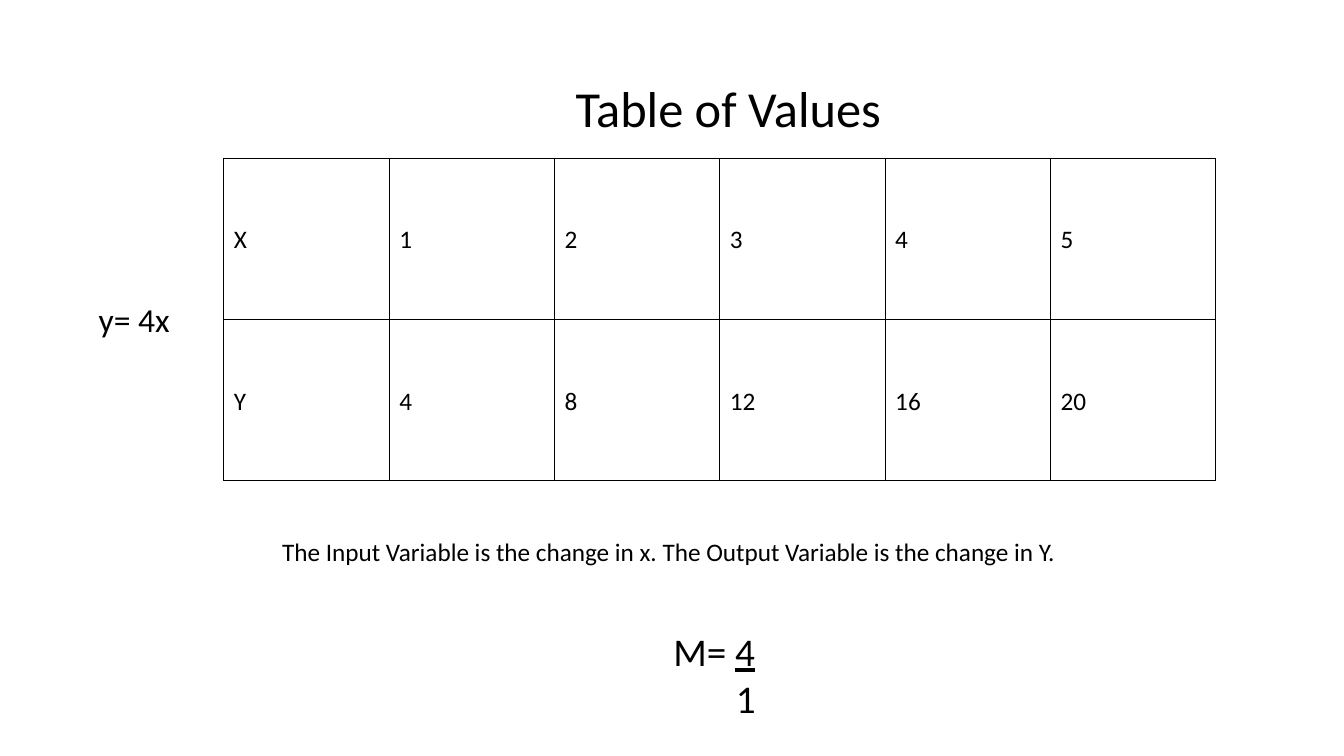
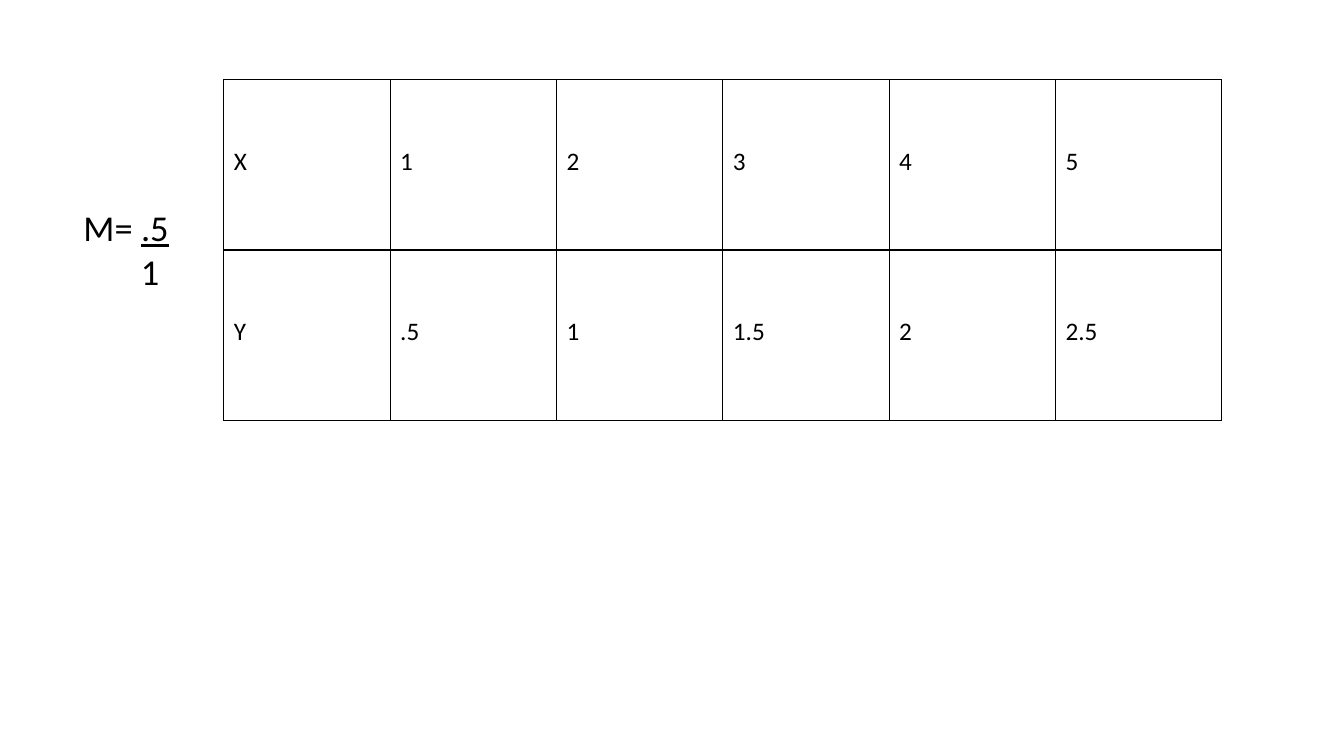
from dataclasses import dataclass

from lxml.etree import SubElement
from pptx import Presentation
from pptx.dml.color import RGBColor
from pptx.enum.text import MSO_AUTO_SIZE
from pptx.oxml import parse_xml
from pptx.oxml.ns import nsdecls
from pptx.util import Inches, Pt


@dataclass(frozen=True)
class Theme:
    font: str = "Calibri"
    ink: str = "000000"
    title: int = 36
    slope: int = 28
    small_slope: int = 26
    equation: int = 24
    body: int = 18
    border: int = 1


class Lesson:
    """Holds the theme, the deck and the current page."""

    def __init__(self, theme):
        self.theme = theme
        self.deck = Presentation()
        self.deck.slide_width = Inches(13.33)
        self.deck.slide_height = Inches(7.5)
        self.page = None

    def new_page(self):
        self.page = self.deck.slides.add_slide(self.deck.slide_layouts[6])

    def add_span(self, para, text, size, underline=False):
        span = para.add_run()
        span.text = text
        span.font.name = self.theme.font
        span.font.size = Pt(size)
        span.font.color.rgb = RGBColor.from_string(self.theme.ink)
        span.font.underline = underline

    def text_frame(self, place):
        box = self.page.shapes.add_textbox(*map(Inches, place))
        frame = box.text_frame
        frame.word_wrap = True
        frame.auto_size = MSO_AUTO_SIZE.SHAPE_TO_FIT_TEXT
        return frame

    def label(self, text, size, place):
        self.add_span(self.text_frame(place).paragraphs[0], text, size)

    def slope(self, rise, run, size, indent, place):
        """Write the slope as an underlined rise above an indented run."""
        frame = self.text_frame(place)
        top = frame.paragraphs[0]
        self.add_span(top, "M= ", size)
        self.add_span(top, rise, size, underline=True)
        bottom = frame.add_paragraph()
        bottom._p.get_or_add_pPr().set("marL", str(Inches(indent)))
        self.add_span(bottom, run, size)

    def border(self, cell):
        properties = cell._tc.get_or_add_tcPr()
        for position, side in enumerate("LRTB"):
            line = parse_xml(f"<a:ln{side} {nsdecls('a')}/>")
            line.set("w", str(Pt(self.theme.border)))
            namespace = "{%s}" % line.nsmap["a"]
            fill = SubElement(line, namespace + "solidFill")
            SubElement(fill, namespace + "srgbClr", val=self.theme.ink)
            properties.insert(position, line)

    def value_table(self, rows, left, top, column_width, row_height):
        columns = len(rows[0])
        table = self.page.shapes.add_table(
            len(rows), columns, Inches(left), Inches(top),
            Inches(column_width * columns), Inches(row_height * len(rows))).table
        table.first_row = table.horz_banding = False
        for row, values in zip(table.rows, rows):
            for cell, value in zip(row.cells, values):
                cell.fill.background()
                cell.margin_top = Inches(0.66)
                self.border(cell)
                self.add_span(cell.text_frame.paragraphs[0], value, self.theme.body)


def main():
    theme = Theme()
    lesson = Lesson(theme)
    inputs = ["X", "1", "2", "3", "4", "5"]

    # Whole-number slope
    lesson.new_page()
    lesson.value_table([inputs, ["Y", "4", "8", "12", "16", "20"]],
                       2.22, 1.57, 1.64, 1.6)
    lesson.label("The Input Variable is the change in x. "
                 "The Output Variable is the change in Y.",
                 theme.body, (2.7, 5.27, 8.18, 0.4))
    lesson.label("y= 4x", theme.equation, (0.88, 2.92, 1.1, 0.5))
    lesson.label("Table of Values", theme.title, (5.61, 0.72, 5.27, 0.71))
    lesson.slope("4", "1", theme.slope, 0.62, (6.58, 6.17, 1.11, 1.04))

    # Decimal slope
    lesson.new_page()
    lesson.value_table([inputs, ["Y", ".5", "1", "1.5", "2", "2.5"]],
                       2.22, 0.79, 1.65, 1.69)
    lesson.slope(".5", "1", theme.small_slope, 0.57, (0.73, 1.99, 3.47, 0.98))

    lesson.deck.save("out.pptx")


if __name__ == "__main__":
    main()
